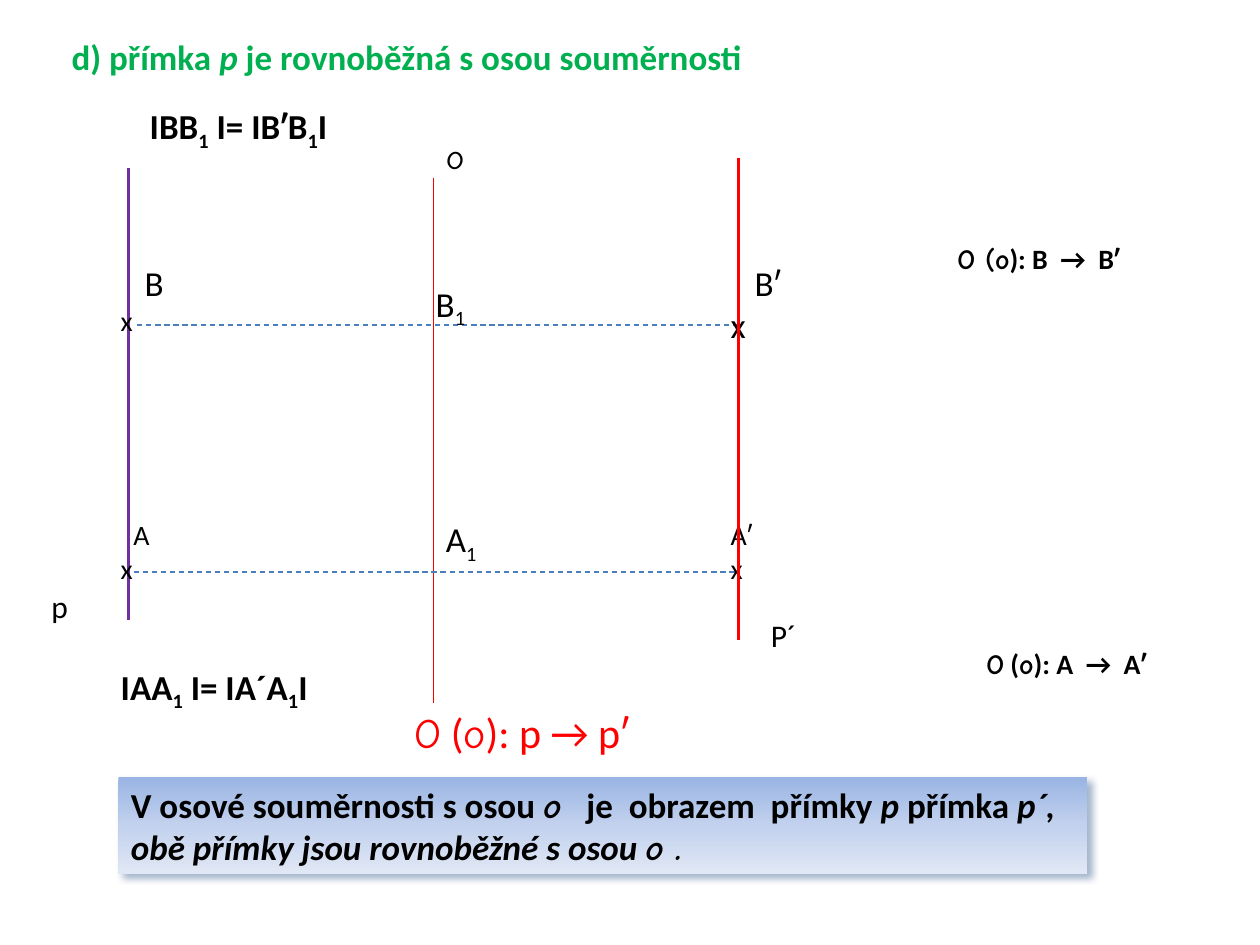
from copy import deepcopy
from lxml.etree import SubElement
from pptx import Presentation
from pptx.dml.color import RGBColor
from pptx.enum.dml import MSO_LINE as Dash
from pptx.enum.shapes import MSO_CONNECTOR as Link, MSO_SHAPE as Shape
from pptx.enum.text import MSO_ANCHOR as Anchor, MSO_AUTO_SIZE as Fit, PP_ALIGN as Align
from pptx.oxml.ns import qn
from pptx.util import Inches, Pt

BLACK = RGBColor(0x00, 0x00, 0x00)
RED = RGBColor(0xFF, 0x00, 0x00)
GREEN = RGBColor(0x00, 0xB0, 0x50)
PURPLE = RGBColor(0x70, 0x30, 0xA0)
BLUE = RGBColor(0x4B, 0x7E, 0xBC)
SHADES = [RGBColor(0x9A, 0xB5, 0xE4), RGBColor(0xC2, 0xD1, 0xED), RGBColor(0xE1, 0xE8, 0xF5)]
BODY, HAND = "Calibri", "Comic Neue"

LEFT, AXIS, RIGHT = 1.02, 3.44, 5.86
ROW_A, ROW_B = 4.54, 2.58


def add_line(slide, start, end, color, width, dash=None):
    line = slide.shapes.add_connector(Link.STRAIGHT, *map(Inches, start + end))
    line.line.color.rgb = color
    line.line.width = Pt(width)
    if dash:
        line.line.dash_style = dash
    SubElement(line._element.spPr, qn("a:effectLst"))


def add_para(frame, runs, size, color=BLACK, bold=False, indent=0):
    """Fill the next paragraph; a run is (text, flags): _ subscript, i italic, h hand font."""
    para = frame.paragraphs[0]
    if para.runs:
        para = frame.add_paragraph()
    para.alignment = Align.LEFT
    font = para.font
    font.name, font.size, font.bold = BODY, Pt(size), bold
    font.color.rgb = color
    if indent:
        para._p.get_or_add_pPr().set("marL", str(Inches(indent)))
    for text, flags in runs:
        run = para.add_run()
        run.text = text
        if "h" in flags:
            run.font.name = HAND
        if "i" in flags:
            run.font.italic = True
        if "_" in flags:
            run._r.get_or_add_rPr().set("baseline", "-25000")


def add_box(slide, at, wrap=False):
    frame = slide.shapes.add_textbox(*map(Inches, at)).text_frame
    frame.word_wrap = wrap
    frame.auto_size = Fit.SHAPE_TO_FIT_TEXT
    return frame


def add_label(slide, at, runs, size=20, color=BLACK, bold=False, wrap=False):
    add_para(add_box(slide, at, wrap), runs, size, color, bold)


def add_mark(slide, at, name, size, cross, indent=0):
    """A point's name above its cross."""
    frame = add_box(slide, at)
    add_para(frame, [(name, "")], size, indent=indent)
    add_para(frame, [("x", "")], cross)


def add_equal(slide, at, point, prime, wrap=False):
    """Equal distances of a point and its image from the axis."""
    runs = [("I" + point * 2, ""), ("1", "_"), (f" I= I{point}{prime}{point}", ""),
            ("1", "_"), ("I", "")]
    add_label(slide, at, runs, bold=True, wrap=wrap)


def add_shadow(shape):
    effects = SubElement(shape._element.spPr, qn("a:effectLst"))
    shadow = SubElement(effects, qn("a:outerShdw"), blurRad=str(Pt(4)), dist=str(Pt(3)),
                        dir="2700000", rotWithShape="0")
    tone = SubElement(shadow, qn("a:srgbClr"), val="1F497D")
    SubElement(tone, qn("a:alpha"), val="40000")


def add_banner(slide, at, lines):
    box = slide.shapes.add_shape(Shape.RECTANGLE, *map(Inches, at))
    box.line.fill.background()
    box.fill.gradient()
    box.fill.gradient_angle = 270
    last = box.fill.gradient_stops[-1]._gs
    last.addprevious(deepcopy(last))
    for i, (stop, shade) in enumerate(zip(box.fill.gradient_stops, SHADES)):
        stop.color.rgb = shade
        stop.position = i / 2
    add_shadow(box)
    frame = box.text_frame
    frame.word_wrap = False
    frame.auto_size = Fit.SHAPE_TO_FIT_TEXT
    frame.vertical_anchor = Anchor.TOP
    for runs in lines:
        add_para(frame, runs, 20, bold=True)


def draw_figure(slide):
    add_line(slide, (AXIS, 1.41), (AXIS, 5.58), RED, 0.75)
    add_line(slide, (LEFT, 1.33), (LEFT, 4.92), PURPLE, 2)
    for start, row in ((1.06, ROW_A), (1.09, ROW_B)):
        add_line(slide, (start, row), (RIGHT, row), BLUE, 0.75, Dash.DASH)

    add_mark(slide, (0.86, 4.06, 0.43, 0.64), "A", 16, 16, 0.1)
    add_mark(slide, (0.86, 2.03, 0.54, 0.71), "B", 20, 16, 0.19)
    add_mark(slide, (5.7, 2.03, 0.61, 1.04), "Bʹ", 20, 20, 0.19)
    add_mark(slide, (5.7, 4.06, 0.39, 0.64), "Aʹ", 16, 16)
    add_line(slide, (RIGHT, 1.25), (RIGHT, 5.08), RED, 2)

    add_label(slide, (3.44, 1.02, 0.39, 0.44), [("o", "h")])
    add_label(slide, (3.36, 2.19, 0.45, 0.44), [("B", ""), ("1", "_")])
    add_label(slide, (3.44, 4.06, 0.46, 0.44), [("A", ""), ("1", "_")])
    add_label(slide, (0.31, 4.61, 0.63, 0.4), [("p", "")], 18, wrap=True)
    add_label(slide, (6.02, 4.84, 0.55, 0.4), [("P´", "")], 18, wrap=True)


def main():
    deck = Presentation()
    deck.slide_width, deck.slide_height = Inches(10), Inches(7.5)
    slide = deck.slides.add_slide(deck.slide_layouts[6])

    draw_figure(slide)
    add_label(slide, (0.47, 0.23, 5.54, 0.74),
              [("d) přímka ", ""), ("p", "i"), (" je rovnoběžná s osou souměrnosti", "")],
              color=GREEN, bold=True)
    add_equal(slide, (1.09, 0.78, 1.66, 0.44), "B", "ʹ")
    add_equal(slide, (0.86, 5.23, 2.02, 0.44), "A", "´", wrap=True)

    mirror = [("O", "h"), (" (", ""), ("o", "h")]
    add_label(slide, (7.73, 5.08, 1.59, 0.37), mirror + [("): A  →  Aʹ", "")], 16, bold=True)
    add_label(slide, (7.5, 1.87, 1.67, 0.37), [("O (o", "h"), ("): B  →  Bʹ", "")], 16, bold=True)
    add_label(slide, (3.19, 5.56, 2.06, 0.5), mirror + [("): p → pʹ", "")], 24, RED)

    add_banner(slide, (0.94, 6.17, 7.69, 0.77), [
        [("V osové souměrnosti s osou ", ""), ("o  ", "hi"), ("je  obrazem  přímky ", ""),
         ("p", "i"), (" přímka ", ""), ("p´,", "i")],
        [("obě přímky jsou rovnoběžné s osou ", "i"), ("o .", "hi")],
    ])
    deck.save("out.pptx")


if __name__ == "__main__":
    main()
